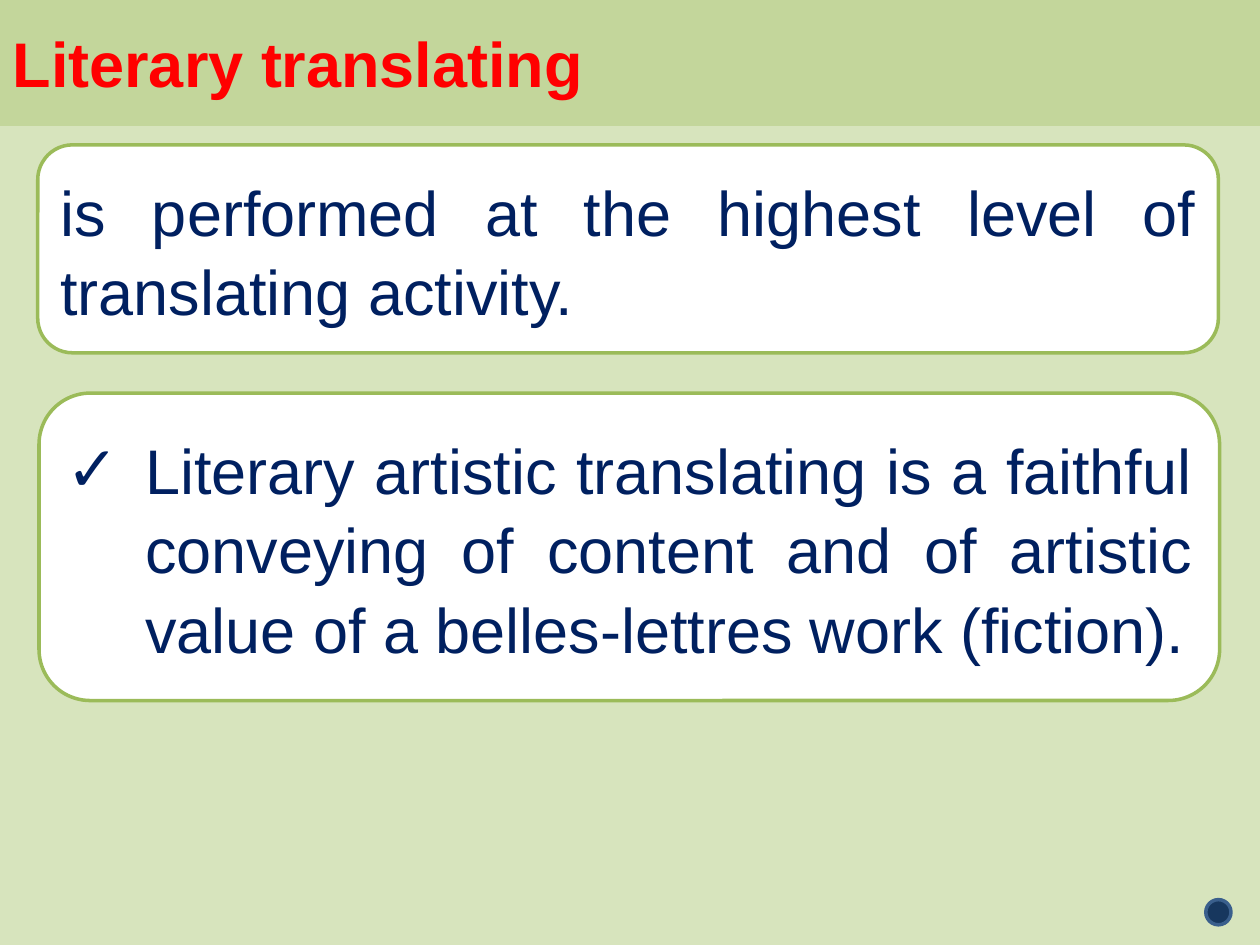
import pptx
import pptx.util
import pptx.dml.color
import pptx.enum.shapes
import pptx.enum.text
import lxml.etree

Pt = pptx.util.Pt
SHAPE = pptx.enum.shapes.MSO_SHAPE
ALIGN = pptx.enum.text.PP_ALIGN

COLORS = {
    "background": "D7E4BD", "band": "C3D69B", "title": "FF0000",
    "box": "FFFFFF", "border": "9BBB59", "text": "002060",
    "dot": "17375E", "dot_border": "3A5F8C",
}
TITLE = "Literary translating"
# text, (left, top, width, height), bullet
BOXES = [
    ("is performed at the highest level of translating activity.",
     (21.6, 82.8, 674.64, 118.8), None),
    ("Literary artistic translating is a faithful conveying of content "
     "and of artistic value of a belles-lettres work (fiction).",
     (22.3, 224.64, 674.64, 175.68), "✓"),
]
DOT = (689.04, 514.08, 14.4, 14.4)
HANGING = Pt(45)


def rgb(name):
    return pptx.dml.color.RGBColor.from_string(COLORS[name])


def paint(sp, fill, line):
    sp.fill.solid()
    sp.fill.fore_color.rgb = rgb(fill)
    sp.line.color.rgb = rgb(line)
    sp.line.width = Pt(2)


def add_shape(slide, kind, at, fill, line):
    sp = slide.shapes.add_shape(kind, *map(Pt, at))
    sp.shadow.inherit = False
    paint(sp, fill, line)
    return sp


def write(sp, text, color, align, bold=False):
    tf = sp.text_frame
    tf.word_wrap = True
    tf.vertical_anchor = pptx.enum.text.MSO_ANCHOR.MIDDLE
    p = tf.paragraphs[0]
    p.alignment = align
    r = p.add_run()
    r.text = text
    for key, value in {"name": "Arial", "size": Pt(36), "bold": bold}.items():
        setattr(r.font, key, value)
    r.font.color.rgb = rgb(color)
    return p


def add_bullet(p, char):
    pPr = p._p.get_or_add_pPr()
    pPr.set("marL", str(HANGING))
    pPr.set("indent", str(-HANGING))
    for tag, key, value in (("buFont", "typeface", "Arial"), ("buChar", "char", char)):
        lxml.etree.SubElement(pPr, pptx.oxml.ns.qn("a:" + tag)).set(key, value)


def main():
    prs = pptx.Presentation()
    prs.slide_width, prs.slide_height = Pt(720), Pt(540)
    slide = prs.slides.add_slide(prs.slide_layouts.get_by_name("Title Only"))
    slide.background.fill.solid()
    slide.background.fill.fore_color.rgb = rgb("background")

    title = slide.shapes.title
    title.left, title.top, title.width, title.height = map(Pt, (0, 0, 720, 71.28))
    paint(title, "band", "band")
    write(title, TITLE, "title", ALIGN.LEFT, bold=True)

    add_shape(slide, SHAPE.OVAL, DOT, "dot", "dot_border")

    for text, at, bullet in BOXES:
        sp = add_shape(slide, SHAPE.ROUNDED_RECTANGLE, at, "box", "border")
        p = write(sp, text, "text", ALIGN.JUSTIFY)
        p.line_spacing = 1.05
        if bullet:
            add_bullet(p, bullet)

    prs.save("out.pptx")


if __name__ == "__main__":
    main()
